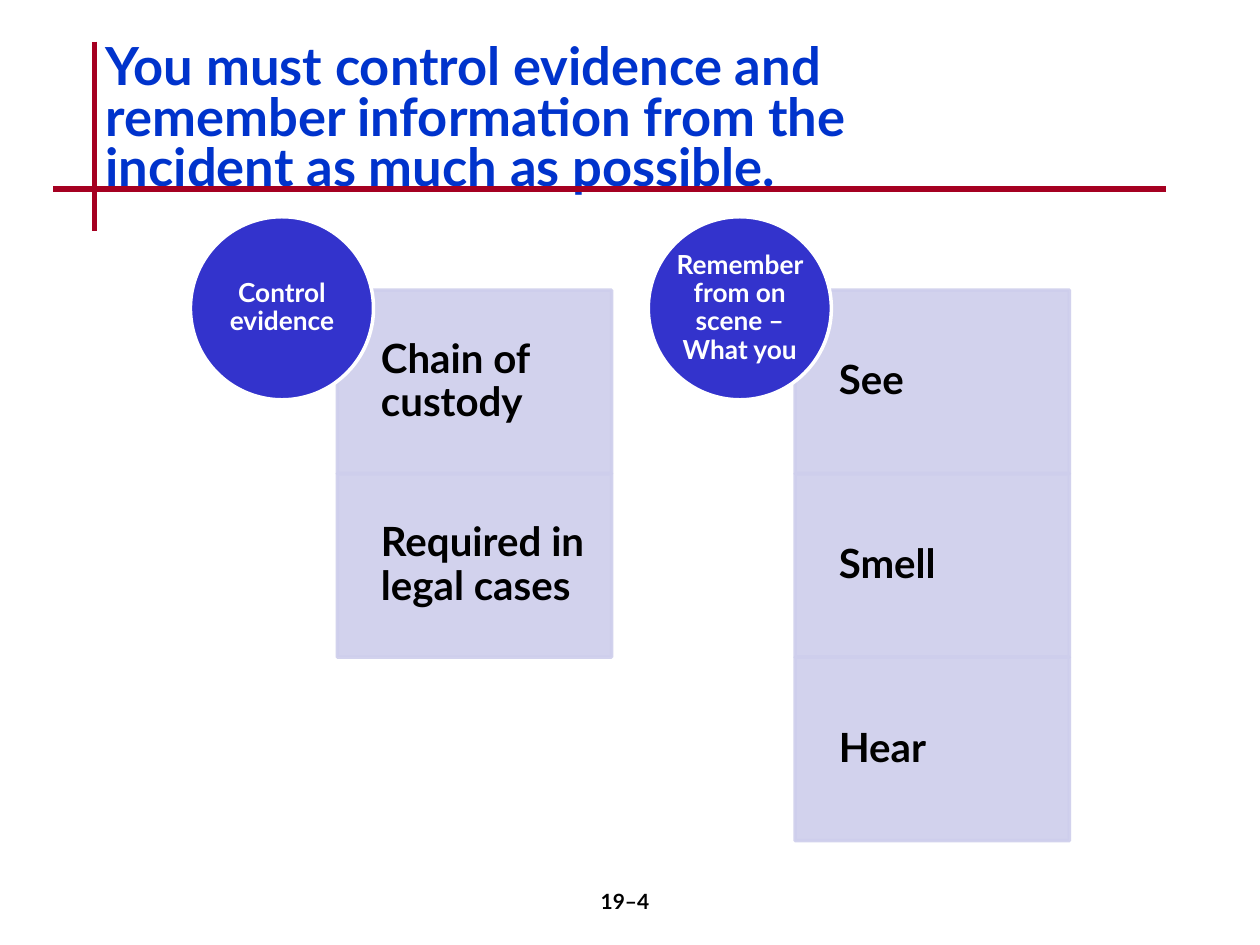
from dataclasses import dataclass

from lxml.etree import SubElement
from pptx import Presentation
from pptx.dml.color import RGBColor
from pptx.enum.shapes import MSO_CONNECTOR, MSO_SHAPE
from pptx.enum.text import MSO_ANCHOR as ANCHOR, MSO_AUTO_SIZE, PP_ALIGN as ALIGN
from pptx.oxml.ns import qn
from pptx.util import Cm, Pt


@dataclass(frozen=True)
class Theme:
    font: str = "Lato"
    title: str = "0033CC"
    rule: str = "A50021"
    circle: str = "3333CC"
    panel: str = "CECEEC"
    light: str = "FFFFFF"
    dark: str = "000000"
    title_pt: int = 30
    item_pt: int = 23
    head_pt: int = 15
    page_pt: int = 12
    rule_pt: int = 3
    outline_pt: int = 2
    opacity: int = 90


THEME = Theme()
RULES = [(1.9, 0.84, 1.9, 4.65), (1.07, 3.81, 23.5, 3.81)]
GROUPS = [
    ("Control evidence", ["Chain of custody", "Required in legal cases"]),
    ("Remember from on scene – What you", ["See", "Smell", "Hear"]),
]
COL_LEFT, COL_PITCH = 3.84, 9.23
CIRCLE_TOP, CIRCLE_SIZE = 4.37, 3.69
PANEL_SHIFT, PANEL_TOP, PANEL_WIDTH, PANEL_HEIGHT = 2.96, 5.85, 5.53, 3.7


def rgb(color):
    return RGBColor.from_string(color)


def write(sp, text, size, color, align=ALIGN.LEFT, anchor=ANCHOR.MIDDLE,
          spacing=0.9, margins=(0, 0, 0, 0)):
    tf = sp.text_frame
    sides = ("margin_left", "margin_top", "margin_right", "margin_bottom")
    frame = {"word_wrap": True, "auto_size": MSO_AUTO_SIZE.NONE, "vertical_anchor": anchor}
    frame.update(zip(sides, map(Cm, margins)))
    p = tf.paragraphs[0]
    r = p.add_run()
    r.text = text
    formats = [
        (tf, frame),
        (p, {"alignment": align, "line_spacing": spacing}),
        (r.font, {"name": THEME.font, "size": Pt(size), "bold": True}),
    ]
    for target, values in formats:
        for name, value in values.items():
            setattr(target, name, value)
    r.font.color.rgb = rgb(color)


def set_opacity(sp, percent):
    for color in sp.element.spPr.iter(qn("a:srgbClr")):
        SubElement(color, qn("a:alpha")).set("val", str(percent * 1000))


def add_rule(slide, ends):
    line = slide.shapes.add_connector(MSO_CONNECTOR.STRAIGHT, *map(Cm, ends))
    line.line.color.rgb = rgb(THEME.rule)
    line.line.width = Pt(THEME.rule_pt)
    SubElement(line.element.spPr, qn("a:effectLst"))


def add_title(slide, text):
    sp = slide.shapes.title
    box = {"left": 1.88, "top": 0.79, "width": 19.13, "height": 2.54}
    for name, value in box.items():
        setattr(sp, name, Cm(value))
    write(sp, text, THEME.title_pt, THEME.title, anchor=ANCHOR.TOP,
          spacing=0.8, margins=(0.25, 0.13, 0.25, 0.13))


def add_page_number(slide, text):
    sp = slide.shapes.add_textbox(Cm(9.96), Cm(17.78), Cm(5.28), Cm(1.27))
    write(sp, text, THEME.page_pt, THEME.dark, ALIGN.CENTER, ANCHOR.TOP,
          spacing=1.0, margins=(0.25, 0.13, 0.25, 0.13))


def add_filled(slide, kind, box, fill, outline):
    sp = slide.shapes.add_shape(kind, *map(Cm, box))
    sp.shadow.inherit = False
    sp.fill.solid()
    sp.fill.fore_color.rgb = rgb(fill)
    sp.line.color.rgb = rgb(outline)
    sp.line.width = Pt(THEME.outline_pt)
    return sp


def add_panel(slide, left, top, text):
    sp = add_filled(slide, MSO_SHAPE.RECTANGLE, (left, top, PANEL_WIDTH, PANEL_HEIGHT),
                    THEME.panel, THEME.panel)
    set_opacity(sp, THEME.opacity)
    write(sp, text, THEME.item_pt, THEME.dark, margins=(0.88, 0.45, 0.45, 0.45))


def add_circle(slide, left, text):
    sp = add_filled(slide, MSO_SHAPE.OVAL, (left, CIRCLE_TOP, CIRCLE_SIZE, CIRCLE_SIZE),
                    THEME.circle, THEME.light)
    write(sp, text, THEME.head_pt, THEME.light, ALIGN.CENTER)


def add_group(slide, left, heading, items):
    for row, item in enumerate(items):
        add_panel(slide, left + PANEL_SHIFT, PANEL_TOP + row * PANEL_HEIGHT, item)
    add_circle(slide, left, heading)


def main():
    prs = Presentation()
    prs.slide_width, prs.slide_height = Cm(25.4), Cm(19.05)
    slide = prs.slides.add_slide(prs.slide_layouts[5])
    for ends in RULES:
        add_rule(slide, ends)
    add_title(slide, "You must control evidence and remember information "
                     "from the incident as much as possible.")
    add_page_number(slide, "19–4")
    for col, (heading, items) in enumerate(GROUPS):
        add_group(slide, COL_LEFT + col * COL_PITCH, heading, items)
    prs.save("out.pptx")


if __name__ == "__main__":
    main()
